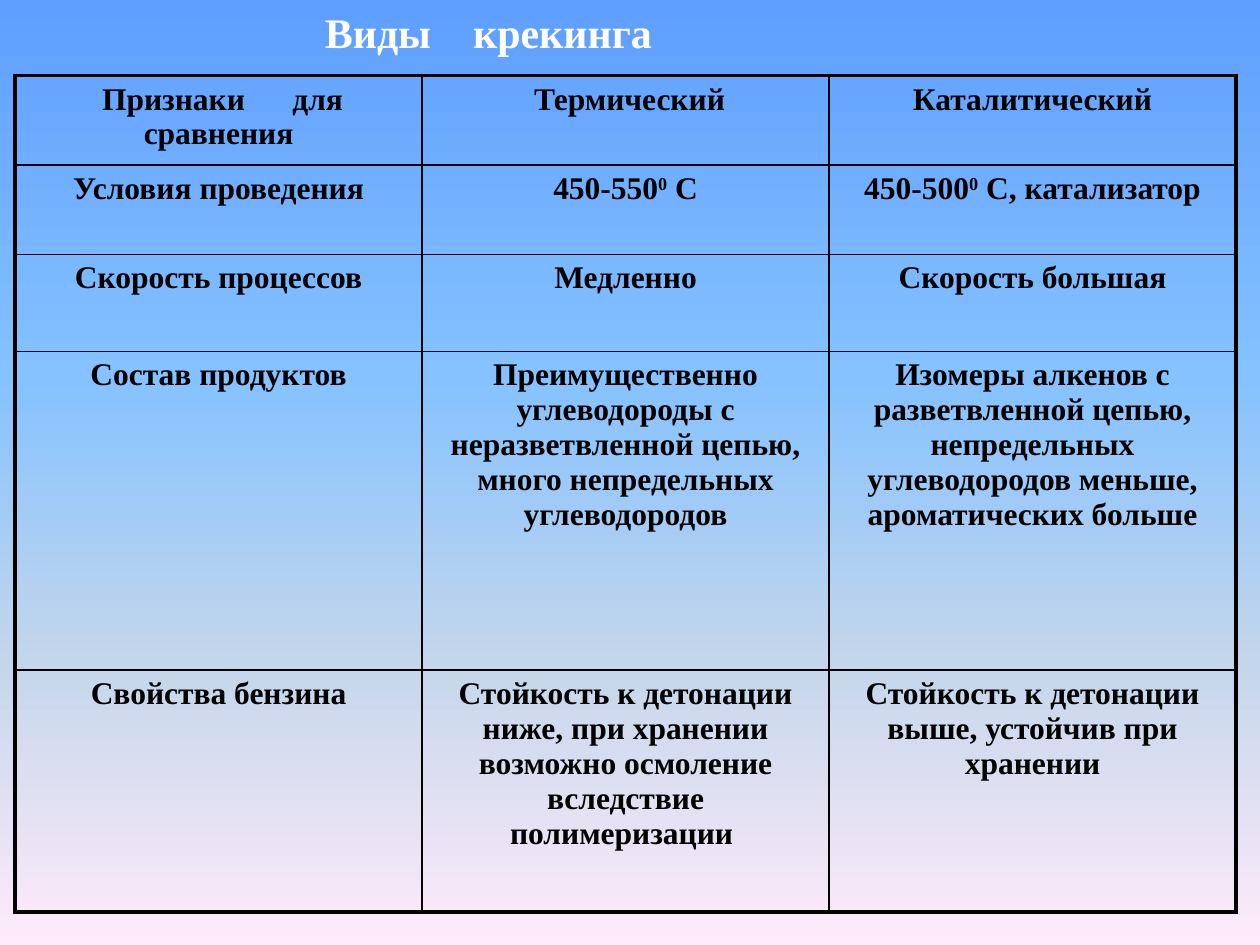
"""Build a slide that compares thermal and catalytic cracking."""
from lxml.etree import SubElement as Sub
from pptx import Presentation
from pptx.dml.color import RGBColor as RGB
from pptx.enum.text import PP_ALIGN as Align
from pptx.oxml.ns import qn
from pptx.util import Inches as In, Pt

FONT = "Times New Roman"
WHITE, BLACK = RGB(255, 255, 255), RGB(0, 0, 0)
SKY = [(0, RGB(0x5E, 0x9E, 0xFF)), (40, RGB(0x85, 0xC2, 0xFF)),
       (70, RGB(0xC4, 0xD6, 0xEB)), (100, RGB(0xFF, 0xEB, 0xFA))]
THIN, THICK = 1, 2.25
SUP = ("0", {"baseline": "30000"})


def gap(pts):
    return " ", {"spc": str(int(pts * 100))}


TITLE = ["Виды", gap(18), "крекинга"]
ROWS = [
    (0.71, [[" Признаки", gap(22.5), "для сравнения"],
            [" Термический"], ["Каталитический"]]),
    (0.71, [["Условия проведения"], ["450-550", SUP, " С"],
            ["450-500", SUP, " С, катализатор"]]),
    (0.77, [["Скорость процессов"], ["Медленно"], ["Скорость большая"]]),
    (2.53, [["Состав продуктов"],
            ["Преимущественно углеводороды с неразветвленной цепью, "
             "много непредельных углеводородов"],
            ["Изомеры алкенов с разветвленной цепью, непредельных "
             "углеводородов меньше, ароматических больше"]]),
    (1.92, [["Свойства бензина"],
            ["Стойкость к детонации ниже, при хранении возможно "
             "осмоление вследствие полимеризации "],
            ["Стойкость к детонации выше, устойчив при хранении"]]),
]
COLS, WIDE = 3, 3.23


def write(para, parts, size, color):
    for part in parts:
        text, marks = (part, {}) if isinstance(part, str) else part
        run = para.add_run()
        run.text = text
        font = run.font
        font.name, font.size, font.bold = FONT, Pt(size), True
        font.color.rgb = color
        for key, val in marks.items():
            run._r.get_or_add_rPr().set(key, val)


def paint(fill, stops):
    fill.gradient()
    fill.gradient_angle = 270
    stop_list = fill._fill._gradFill.find(qn("a:gsLst"))
    for old in list(stop_list):
        stop_list.remove(old)
    for pos, color in stops:
        stop = Sub(stop_list, qn("a:gs"), pos=str(pos * 1000))
        Sub(stop, qn("a:srgbClr"), val=str(color))


def edge(cell, row, col):
    outer = {"L": col == 0, "R": col == COLS - 1,
             "T": row == 0, "B": row == len(ROWS) - 1}
    props = cell._tc.get_or_add_tcPr()
    for side, thick in outer.items():
        line = Sub(props, qn("a:ln" + side),
                   w=str(Pt(THICK if thick else THIN)))
        Sub(Sub(line, qn("a:solidFill")), qn("a:srgbClr"), val=str(BLACK))
    cell.fill.background()


def main():
    deck = Presentation()
    deck.slide_width, deck.slide_height = In(10), In(7.5)
    slide = deck.slides.add_slide(deck.slide_layouts[6])
    paint(slide.background.fill, SKY)

    head = slide.shapes.add_textbox(In(2.48), 0, In(5.23), In(0.5)).text_frame
    head.word_wrap = True
    write(head.paragraphs[0], TITLE, 24, WHITE)

    tall = sum(high for high, _ in ROWS)
    grid = slide.shapes.add_table(len(ROWS), COLS, In(0.12), In(0.6),
                                  In(COLS * WIDE), In(tall)).table
    grid.first_row = grid.horz_banding = False
    for col in grid.columns:
        col.width = In(WIDE)
    for r, (high, cells) in enumerate(ROWS):
        grid.rows[r].height = In(high)
        for c, parts in enumerate(cells):
            cell = grid.cell(r, c)
            para = cell.text_frame.paragraphs[0]
            para.alignment, para.space_before = Align.CENTER, Pt(3.6)
            write(para, parts, 18, BLACK)
            edge(cell, r, c)

    deck.save("out.pptx")


if __name__ == "__main__":
    main()
